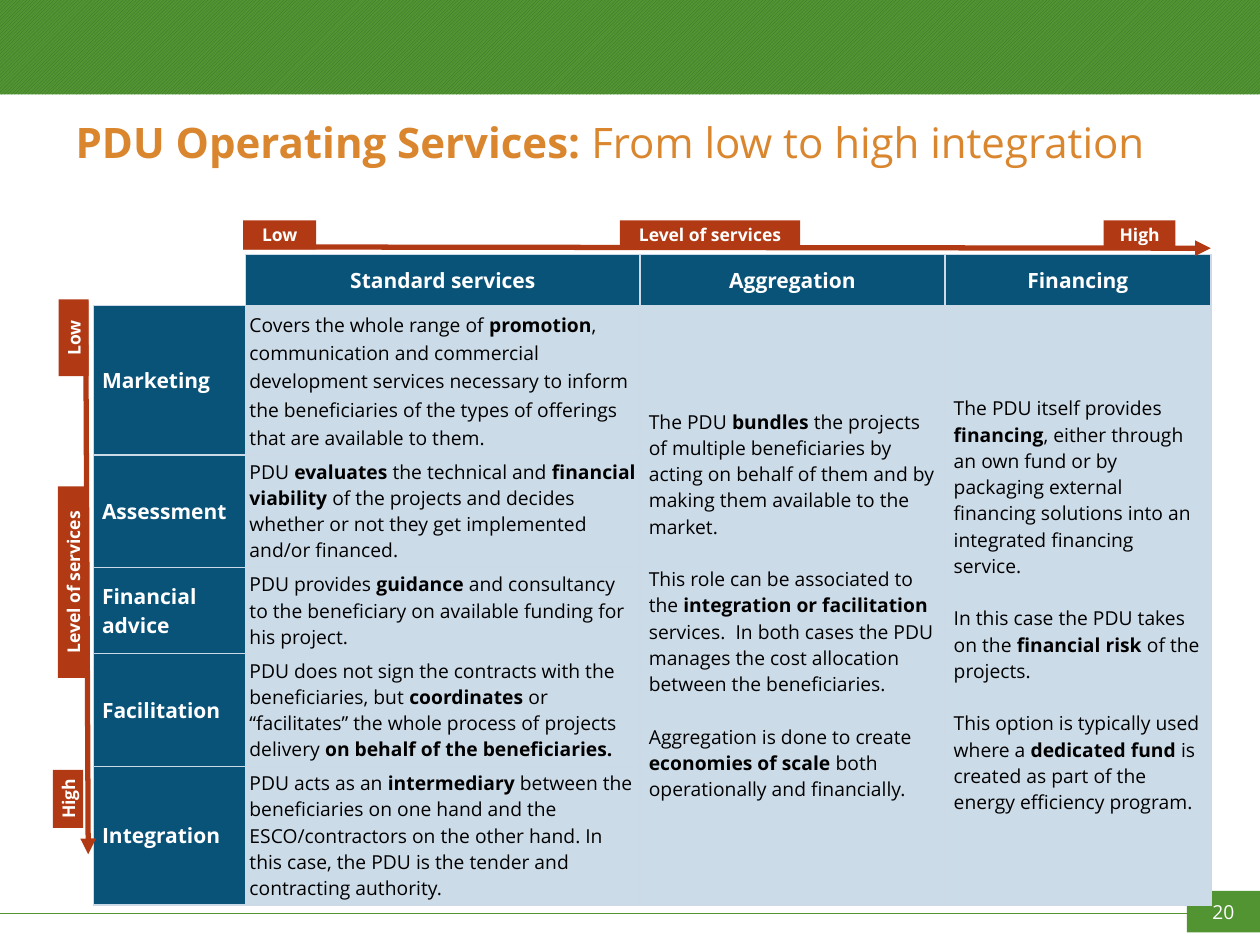
from dataclasses import dataclass

from lxml import etree
from pptx import Presentation
from pptx import util as u
from pptx.dml import color
from pptx.enum import dml, shapes, text
from pptx.oxml import ns


def rgb(value):
    return color.RGBColor.from_string(value)


@dataclass(frozen=True)
class Theme:
    font: str = "Open Sans"
    green = rgb("539432")
    dark_green = rgb("35702E")
    orange = rgb("D9862F")
    blue = rgb("095379")
    pale = rgb("CCDBE8")
    red = rgb("B13A14")
    white = rgb("FFFFFF")
    black = rgb("000000")
    border: str = "CCDAE7"
    title: int = 24
    heading: int = 12
    body: int = 11
    label: int = 10
    gap: int = 15


T = Theme()

COLUMNS = [1.21, 3.13, 2.42, 2.11]
ROWS = [0.37, 1.13, 0.72, 0.62, 0.85, 0.85]
HEADINGS = ["Standard services", "Aggregation", "Financing"]
SERVICES = [
    ("Marketing", "Covers the whole range of **promotion**, communication and commercial "
     "development services necessary to inform the beneficiaries of the types of "
     "offerings that are available to them."),
    ("Assessment", "PDU **evaluates** the technical and **financial viability** of the "
     "projects and decides whether or not they get implemented and/or financed."),
    ("Financial advice", "PDU provides **guidance** and consultancy to the beneficiary on "
     "available funding for his project."),
    ("Facilitation", "PDU does not sign the contracts with the beneficiaries, but "
     "**coordinates** or “facilitates” the whole process of projects delivery "
     "**on behalf of the beneficiaries.**"),
    ("Integration", "PDU acts as an **intermediary** between the beneficiaries on one hand "
     "and the ESCO/contractors on the other hand. In this case, the PDU is the tender "
     "and contracting authority."),
]
AGGREGATION = [
    "The PDU **bundles** the projects of multiple beneficiaries by acting on behalf of "
    "them and by making them available to the market.",
    "This role can be associated to the **integration or facilitation** services.  In both "
    "cases the PDU manages the cost allocation between the beneficiaries.",
    "Aggregation is done to create **economies of scale** both operationally and financially.",
]
FINANCING = [
    "The PDU itself provides **financing**, either through an own fund or by packaging "
    "external financing solutions into an integrated financing service.",
    "In this case the PDU takes on the **financial risk** of the projects.",
    "This option is typically used where a **dedicated fund** is created as part of the "
    "energy efficiency program.",
]
ACROSS_LABELS = [("Low", 1.93, 0.58), ("Level of services", 4.92, 1.43), ("High", 8.76, 0.57)]
DOWN_LABELS = [("Low", 0.28, 2.56, 0.61), ("Level of services", -0.18, 4.5, 1.52),
               ("High", 0.31, 6.22, 0.46)]


def write(tf, paragraphs, size, fill, align=text.PP_ALIGN.LEFT, bold=False):
    for i, content in enumerate(paragraphs):
        p = tf.paragraphs[0] if i == 0 else tf.add_paragraph()
        p.alignment = align
        if i:
            p.space_before = u.Pt(T.gap)
        p.font.name = T.font
        p.font.size = u.Pt(size)
        p.font.color.rgb = fill
        p.font.bold = bold
        for j, part in enumerate(content.split("**")):
            if part:
                r = p.add_run()
                r.text = part
                if j % 2:
                    r.font.bold = True


def set_margins(box, inset):
    box.margin_left = box.margin_right = u.Inches(inset)
    box.margin_top = box.margin_bottom = u.Inches(inset)


def add_rect(s, x, y, w, h, fill):
    sp = s.shapes.add_shape(shapes.MSO_SHAPE.RECTANGLE, *map(u.Inches, (x, y, w, h)))
    sp.shadow.inherit = False
    sp.fill.solid()
    sp.fill.fore_color.rgb = fill
    sp.line.fill.background()
    return sp


def add_label(s, content, x, y, w, h, fill=T.red, size=T.label, bold=True, rotation=0):
    sp = add_rect(s, x, y, w, h, fill)
    sp.rotation = rotation
    tf = sp.text_frame
    set_margins(tf, 0)
    tf.vertical_anchor = text.MSO_ANCHOR.MIDDLE
    write(tf, [content], size, T.white, text.PP_ALIGN.CENTER, bold)


def add_line(s, start, end, fill, width, arrow=False):
    c = s.shapes.add_connector(shapes.MSO_CONNECTOR.STRAIGHT, *map(u.Inches, start + end))
    c.line.color.rgb = fill
    c.line.width = u.Pt(width)
    if arrow:
        etree.SubElement(c.line._get_or_add_ln(), ns.qn("a:tailEnd"), type="triangle")
    etree.SubElement(c._element.spPr, ns.qn("a:effectLst"))


def add_borders(cell):
    tc_pr = cell._tc.get_or_add_tcPr()
    for side in "LRTB":
        ln = etree.SubElement(tc_pr, ns.qn(f"a:ln{side}"), w=str(u.Pt(1)))
        solid = etree.SubElement(ln, ns.qn("a:solidFill"))
        etree.SubElement(solid, ns.qn("a:srgbClr"), val=T.border)


def fill_cell(cell, paragraphs, heading=False, inset=0.07, align=text.PP_ALIGN.LEFT):
    set_margins(cell, inset)
    cell.vertical_anchor = text.MSO_ANCHOR.MIDDLE
    cell.fill.solid()
    cell.fill.fore_color.rgb = T.blue if heading else T.pale
    write(cell.text_frame, paragraphs, T.heading if heading else T.body,
          T.white if heading else T.black, align, heading)


def add_services_table(s):
    frame = s.shapes.add_table(len(ROWS), len(COLUMNS), u.Inches(0.74), u.Inches(2.02),
                               u.Inches(sum(COLUMNS)), u.Inches(sum(ROWS)))
    table = frame.table
    table.first_row = table.horz_banding = False
    for column, width in zip(table.columns, COLUMNS):
        column.width = u.Inches(width)
    for row, height in zip(table.rows, ROWS):
        row.height = u.Inches(height)
    corner, *others = table.iter_cells()
    corner.fill.background()
    for cell in others:
        add_borders(cell)
    for col, heading in enumerate(HEADINGS, 1):
        fill_cell(table.cell(0, col), [heading], True, align=text.PP_ALIGN.CENTER)
    for row, (name, description) in enumerate(SERVICES, 1):
        fill_cell(table.cell(row, 0), [name], True)
        fill_cell(table.cell(row, 1), [description], inset=0.03)
    table.cell(1, 1).text_frame.paragraphs[0].line_spacing = 1.08
    for col, paragraphs in enumerate((AGGREGATION, FINANCING), 2):
        table.cell(1, col).merge(table.cell(len(SERVICES), col))
        fill_cell(table.cell(1, col), paragraphs)


def add_title(s):
    title = s.shapes.title
    title.left, title.top, title.width, title.height = map(u.Inches, (0.5, 0.75, 9, 0.75))
    tf = title.text_frame
    tf.auto_size = text.MSO_AUTO_SIZE.NONE
    tf.vertical_anchor = text.MSO_ANCHOR.MIDDLE
    write(tf, ["**PDU Operating Services: **From low to high integration"], T.title, T.orange)


def add_page_frame(s):
    band = add_rect(s, 0, 0, 10, 0.75, T.green)
    band.fill.patterned()
    band.fill.pattern = dml.MSO_PATTERN.LIGHT_UPWARD_DIAGONAL
    band.fill.fore_color.rgb = T.dark_green
    band.fill.back_color.rgb = T.green
    add_line(s, (10, 7.25), (0, 7.25), T.green, 0.75)
    add_label(s, "20", 9.42, 7.07, 0.58, 0.33, T.green, T.body, False)


def add_level_axes(s):
    for content, x, w in ACROSS_LABELS:
        add_label(s, content, x, 1.75, w, 0.23)
    add_line(s, (1.93, 1.96), (9.61, 1.97), T.red, 3, True)
    for content, x, y, w in DOWN_LABELS:
        add_label(s, content, x, y, w, 0.24, rotation=270)
    add_line(s, (0.68, 2.39), (0.7, 6.78), T.red, 3, True)


def main():
    prs = Presentation()
    prs.slide_width, prs.slide_height = u.Inches(10), u.Inches(7.5)
    s = prs.slides.add_slide(prs.slide_layouts[5])
    add_page_frame(s)
    add_title(s)
    add_services_table(s)
    add_level_axes(s)
    prs.save("out.pptx")


if __name__ == "__main__":
    main()
